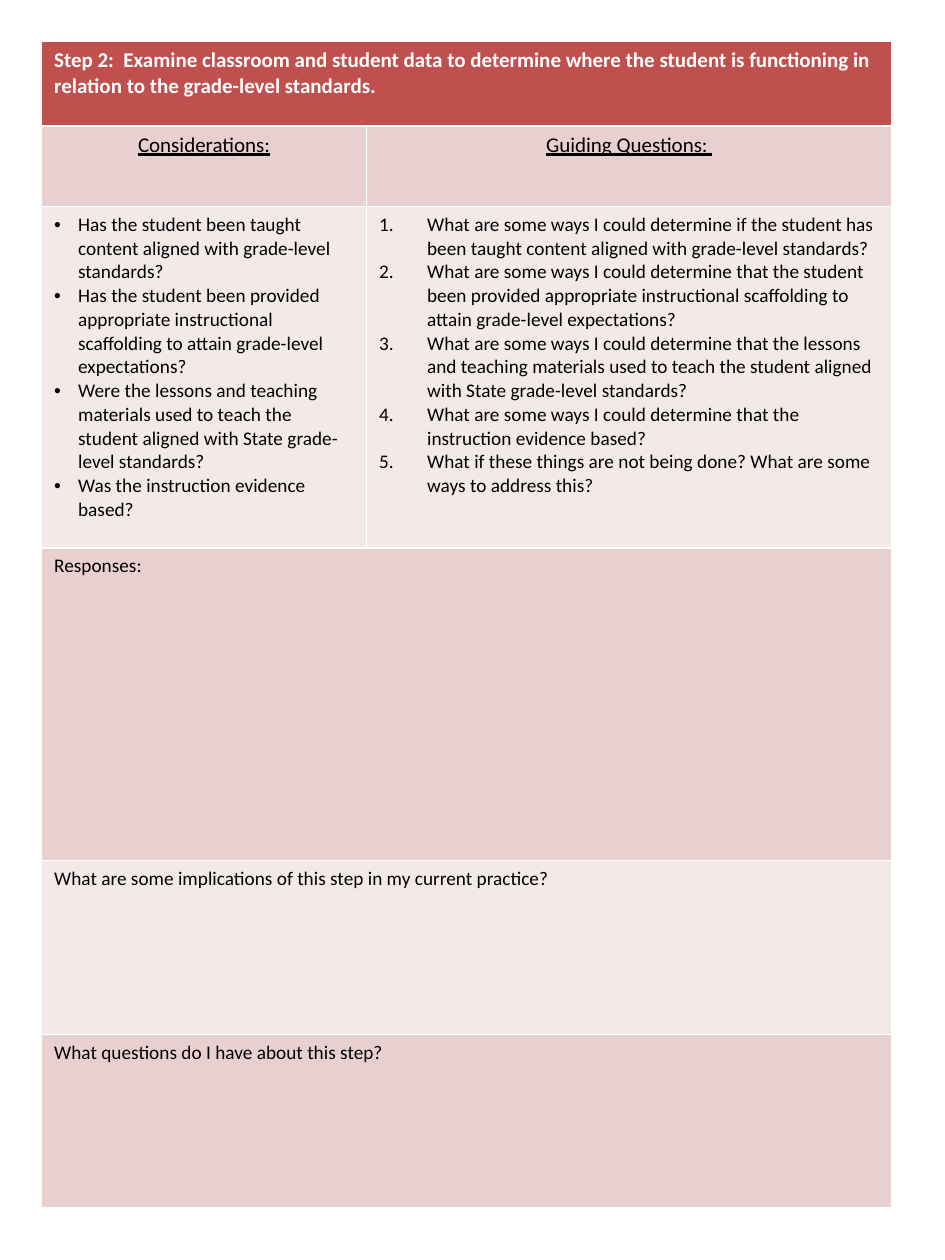
from lxml import etree
from pptx import Presentation
from pptx import util as u
from pptx.dml.color import RGBColor
from pptx.enum import text
from pptx.oxml import ns

COLORS = {"banner": "C0504D", "dark": "E8D0D0", "light": "F4E9E9",
          "white": "FFFFFF", "black": "000000"}
COLUMN_WIDTHS = [2.58, 4.17]
ROW_HEIGHTS = [0.67, 0.64, 2.71, 2.48, 1.38, 1.38]

STEP = ("Step 2:  Examine classroom and student data to determine where the "
        "student is functioning in relation to the grade-level standards.")
HEADINGS = ["Considerations:", "Guiding Questions: "]
CONSIDERATIONS = [
    "Has the student been taught content aligned with grade-level standards?",
    "Has the student been provided appropriate instructional scaffolding to "
    "attain grade-level expectations?",
    "Were the lessons and teaching materials used to teach the student aligned "
    "with State grade-level standards?",
    "Was the instruction evidence based?",
]
QUESTIONS = [
    "What are some ways I could determine if the student has been taught "
    "content aligned with grade-level standards?",
    "What are some ways I could determine that the student been provided "
    "appropriate instructional scaffolding to attain grade-level expectations?",
    "What are some ways I could determine that the lessons and teaching "
    "materials used to teach the student aligned with State grade-level standards?",
    "What are some ways I could determine that the instruction evidence based?",
    "What if these things are not being done? What are some ways to address this?",
]
PROMPTS = ["Responses:",
           "What are some implications of this step in my current practice?",
           "What questions do I have about this step?"]


def fill_cell(cell, lines, fill, size=11, color="black", bold=False,
              underline=False, align=text.PP_ALIGN.LEFT):
    """Write lines into a cell and format its fill and runs."""
    cell.fill.solid()
    cell.fill.fore_color.rgb = RGBColor.from_string(COLORS[fill])
    cell.text_frame.text = "\n".join(lines)
    for paragraph in cell.text_frame.paragraphs:
        paragraph.alignment = align
        for run in paragraph.runs:
            run.font.name = "Calibri"
            run.font.size = u.Pt(size)
            run.font.bold = bold
            run.font.underline = underline
            run.font.color.rgb = RGBColor.from_string(COLORS[color])


def mark_list(cell, indent, tag, **marker):
    """Give every paragraph of a cell a hanging bullet or number."""
    for paragraph in cell.text_frame.paragraphs:
        properties = paragraph._p.get_or_add_pPr()
        properties.set("marL", str(u.Inches(indent)))
        properties.set("indent", str(-u.Inches(indent)))
        etree.SubElement(properties, ns.qn("a:buFont"), typeface="Arial")
        etree.SubElement(properties, ns.qn(tag), **marker)


def add_worksheet(slide, left, top, width, height):
    """Place the step worksheet table in the given box."""
    worksheet = slide.shapes.add_table(
        len(ROW_HEIGHTS), len(COLUMN_WIDTHS), left, top, width, height).table
    for column, column_width in zip(worksheet.columns, COLUMN_WIDTHS):
        column.width = u.Inches(column_width)
    for row, row_height in zip(worksheet.rows, ROW_HEIGHTS):
        row.height = u.Inches(row_height)
    for index in (0, 3, 4, 5):
        worksheet.cell(index, 0).merge(worksheet.cell(index, 1))

    fill_cell(worksheet.cell(0, 0), [STEP], "banner", 12, "white", bold=True)
    for index, heading in enumerate(HEADINGS):
        fill_cell(worksheet.cell(1, index), [heading], "dark", 12,
                  underline=True, align=text.PP_ALIGN.CENTER)

    considerations, questions = worksheet.cell(2, 0), worksheet.cell(2, 1)
    fill_cell(considerations, CONSIDERATIONS, "light")
    mark_list(considerations, 0.19, "a:buChar", char="•")
    fill_cell(questions, QUESTIONS, "light")
    mark_list(questions, 0.38, "a:buAutoNum", type="arabicPeriod")

    for index, prompt in enumerate(PROMPTS, start=3):
        fill_cell(worksheet.cell(index, 0), [prompt],
                  "dark" if index % 2 else "light")


def main():
    """Build the one-slide worksheet and save it."""
    deck = Presentation()
    deck.slide_width, deck.slide_height = u.Inches(7.5), u.Inches(10)
    slide = deck.slides.add_slide(deck.slide_layouts[6])
    add_worksheet(slide, u.Inches(0.33), u.Inches(0.33),
                  u.Inches(sum(COLUMN_WIDTHS)), u.Inches(sum(ROW_HEIGHTS)))
    deck.save("out.pptx")


if __name__ == "__main__":
    main()
